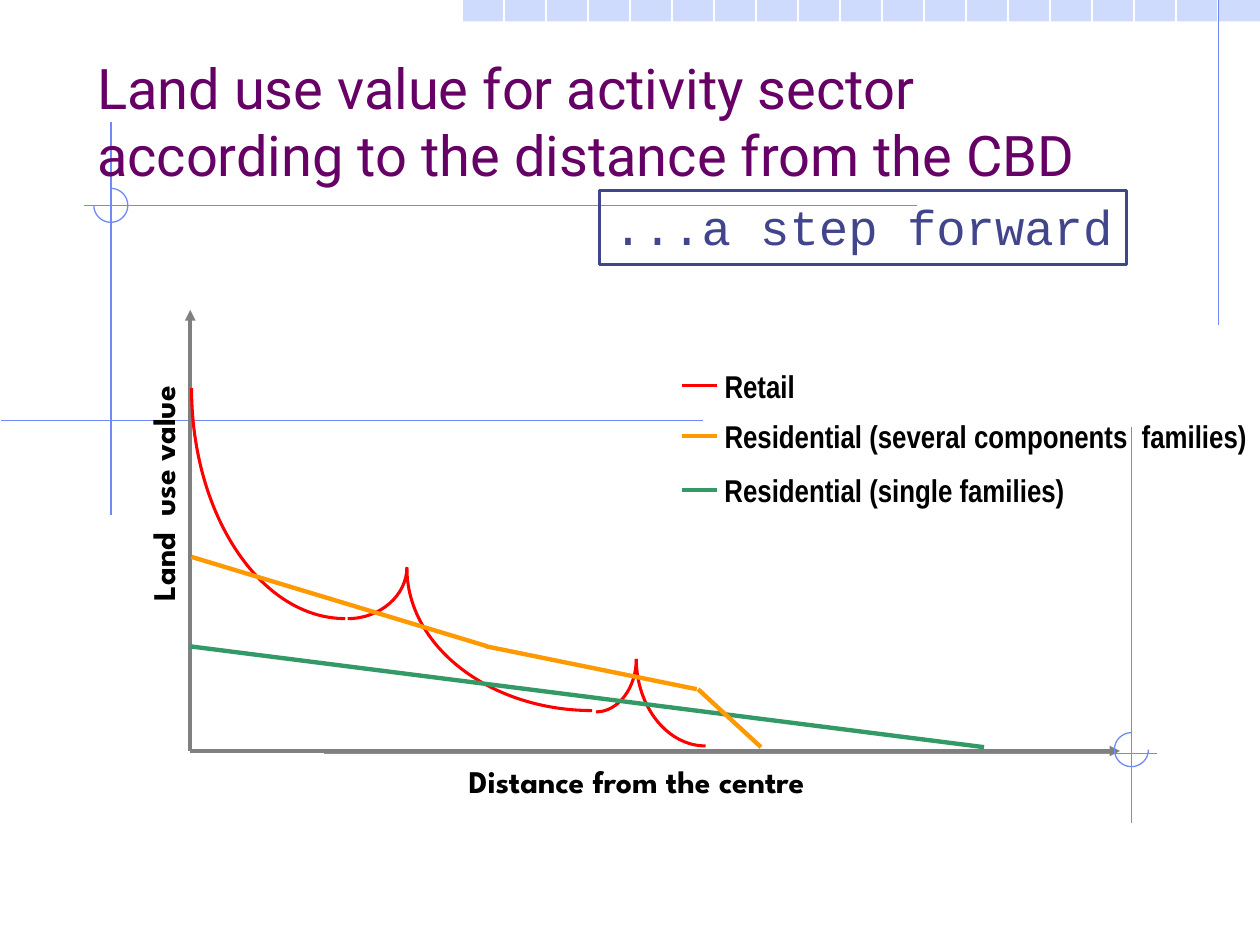
"""Build the slide on land use value against distance from the CBD."""
from math import cos, radians, sin
from lxml.etree import SubElement
from pptx import Presentation
from pptx.dml.color import RGBColor
from pptx.enum.shapes import MSO_CONNECTOR, MSO_SHAPE
from pptx.enum.text import MSO_ANCHOR, PP_ALIGN
from pptx.oxml.ns import qn
from pptx.util import Inches, Pt

RED, ORANGE, GREEN = "FF0000", "FF9900", "339966"
GREY, BLUE, PALE, NAVY = "808080", "6F89F7", "CFDBFD", "40458C"
KAPPA = 0.55


def add_line(x1, y1, x2, y2, color, width=0.75, arrow=None):
    ln = slide.shapes.add_connector(
        MSO_CONNECTOR.STRAIGHT, Inches(x1), Inches(y1), Inches(x2), Inches(y2))
    ln.line.color.rgb = RGBColor.from_string(color)
    ln.line.width = Pt(width)
    if arrow:
        SubElement(ln.line._get_or_add_ln(), qn(f"a:{arrow}"), type="triangle")
    SubElement(ln._element.spPr, qn("a:effectLst"))


def set_text(sp, text, font, size, color="000000", bold=False,
             align=PP_ALIGN.LEFT, wrap=False, inset=0.0):
    tf = sp.text_frame
    tf.word_wrap = wrap
    tf.margin_left = tf.margin_right = Inches(inset)
    tf.margin_top = tf.margin_bottom = Inches(inset / 2)
    p = tf.paragraphs[0]
    p.alignment = align
    r = p.add_run()
    r.text = text
    r.font.name = font
    r.font.size = Pt(size)
    r.font.bold = bold
    r.font.color.rgb = RGBColor.from_string(color)


prs = Presentation()
prs.slide_width, prs.slide_height = Inches(10), Inches(7.5)
slide = prs.slides.add_slide(prs.slide_layouts[5])
title = slide.shapes.title

bar = slide.shapes.add_shape(
    MSO_SHAPE.RECTANGLE, Inches(3.67), 0, Inches(6.33), Inches(0.17))
bar.shadow.inherit = False
bar.fill.solid()
bar.fill.fore_color.rgb = RGBColor.from_string(PALE)
bar.line.fill.background()
for i in range(1, 23):
    add_line(0, i / 3, 10, i / 3, "FFFFFF")
for i in range(1, 30):
    add_line(i / 3, 0, i / 3, 7.5, "FFFFFF")

for ends in [(9.67, 0, 9.67, 2.58), (0.88, 0.97, 0.88, 4.09),
             (5.58, 3.34, 0.01, 3.34), (7.28, 1.63, 0.67, 1.63),
             (2.57, 5.98, 9.18, 5.98), (8.98, 3.39, 8.98, 6.53)]:
    add_line(*ends, BLUE)

slide.shapes._spTree.append(title._element)
title.left, title.top = Inches(0.67), Inches(0.33)
title.width, title.height = Inches(8.5), Inches(1.25)
title.text_frame.vertical_anchor = MSO_ANCHOR.MIDDLE
set_text(title, "Land use value for activity sector according to the distance from the CBD",
         "Roboto", 32, "660066", wrap=True, inset=0.1)

add_line(1.51, 2.46, 1.51, 5.96, GREY, 2, "headEnd")
add_line(1.51, 5.96, 8.89, 5.96, GREY, 2, "tailEnd")
for text, x, y, w, turn in [("Distance from the centre", 3.72, 6.05, 2.96, 0),
                            ("Land  use value", 0.35, 3.68, 1.88, 270)]:
    tb = slide.shapes.add_textbox(Inches(x), Inches(y), Inches(w), Inches(0.3))
    tb.rotation = turn
    set_text(tb, text, "League Spartan", 18, bold=True)

for text, y, w, color, width in [
        ("Retail", 3.06, 0.56, RED, 1.75),
        ("Residential (several components  families)", 3.46, 4.15, ORANGE, 2.5),
        ("Residential (single families)", 3.89, 2.7, GREEN, 2.5)]:
    add_line(5.41, y, 5.69, y, color, width)
    tb = slide.shapes.add_textbox(Inches(5.75), Inches(y - 0.15), Inches(w), Inches(0.3))
    set_text(tb, text, "Arial Narrow", 18, bold=True)

for cx, cy, rx, ry, start, quarters, color, width in [
        (0.88, 1.63, 0.135, 0.135, -90, 3, BLUE, 0.75),
        (8.98, 5.95, 0.135, 0.135, 0, 3, BLUE, 0.75),
        (2.74, 3.08, 1.22, 1.83, 90, 1, RED, 1.75),
        (2.76, 4.5, 0.47, 0.41, 0, 1, RED, 1.75),
        (4.73, 5.23, 0.32, 0.42, 0, 1, RED, 1.75),
        (4.7, 4.51, 1.47, 1.13, 90, 1, RED, 1.75),
        (5.6, 5.23, 0.55, 0.69, 90, 1, RED, 1.75)]:
    unit = [(1, 0)]
    for q in range(quarters):
        unit += [(1, KAPPA), (KAPPA, 1), (0, 1)] if q == 0 else [
            (-v, u) for u, v in unit[-3:]]
    c, s = cos(radians(start)), sin(radians(start))
    points = [(Inches(cx + rx * (u * c - v * s)), Inches(cy + ry * (u * s + v * c)))
              for u, v in unit]
    fb = slide.shapes.build_freeform(*points[0], scale=1.0)
    fb.add_line_segments(points[1:], close=False)
    sp = fb.convert_to_shape()
    outline = next(sp._element.iter(qn("a:path")))
    segments = outline.findall(qn("a:lnTo"))
    for i in range(0, len(segments), 3):
        curve = SubElement(outline, qn("a:cubicBezTo"))
        for seg in segments[i:i + 3]:
            curve.append(seg[0])
            outline.remove(seg)
    sp.shadow.inherit = False
    sp.fill.background()
    sp.line.color.rgb = RGBColor.from_string(color)
    sp.line.width = Pt(width)

add_line(1.51, 5.13, 7.81, 5.93, GREEN, 2.5)
for ends in [(1.52, 4.42, 3.87, 5.13), (3.86, 5.13, 5.53, 5.47), (5.54, 5.47, 6.04, 5.93)]:
    add_line(*ends, ORANGE, 2.5)

box = slide.shapes.add_shape(
    MSO_SHAPE.RECTANGLE, Inches(4.76), Inches(1.51), Inches(4.18), Inches(0.59))
box.shadow.inherit = False
box.fill.background()
box.line.color.rgb = RGBColor.from_string(NAVY)
box.line.width = Pt(1.5)
box.text_frame.vertical_anchor = MSO_ANCHOR.TOP
set_text(box, "...a step forward", "Courier New", 28, NAVY, align=PP_ALIGN.CENTER, inset=0.1)

prs.save("out.pptx")
